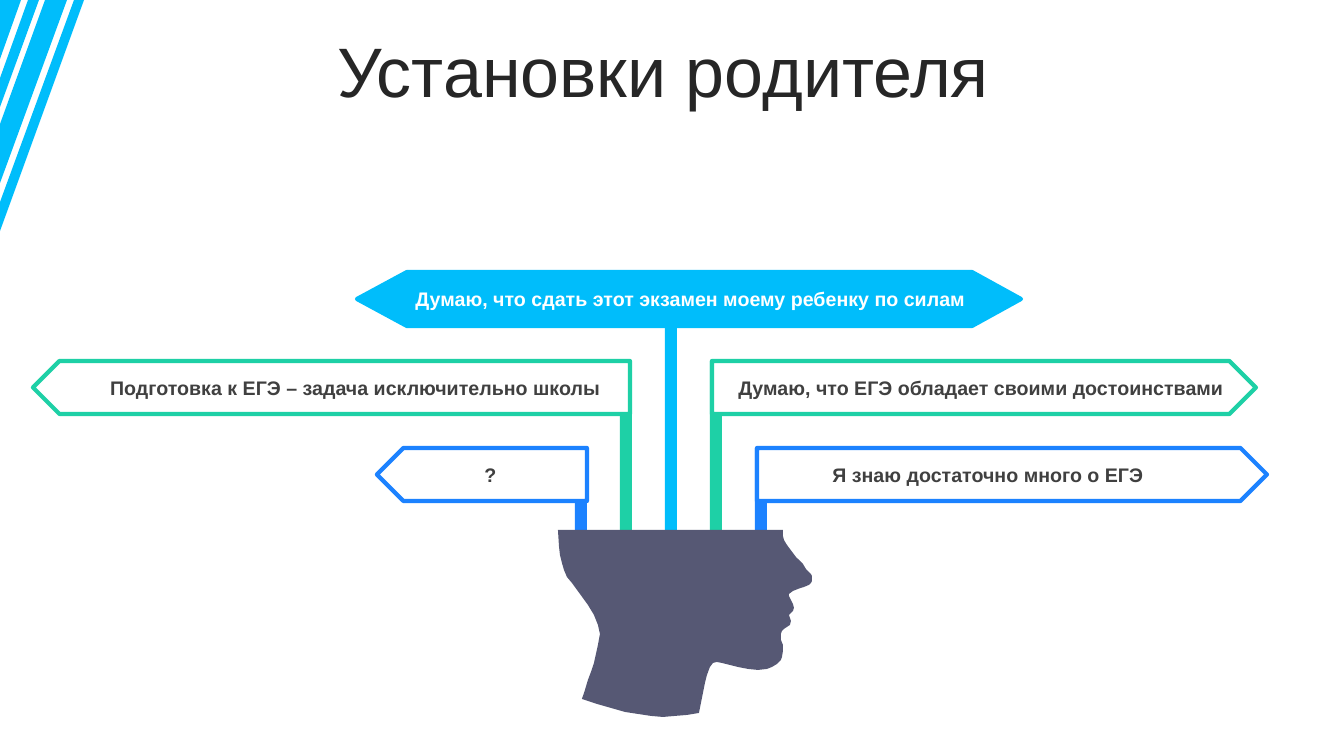
from pptx import Presentation
from pptx.dml.color import RGBColor
from pptx.enum.shapes import MSO_SHAPE as SHAPE
from pptx.enum.text import MSO_ANCHOR as ANCHOR, PP_ALIGN as ALIGN
from pptx.util import Pt

PX = 9144000 / 1008  # EMU per px
FONT = "Arial"
COLORS = {"sky": "00BDFB", "green": "1ED0A6", "blue": "1C82FF", "head": "565874",
          "white": "FFFFFF", "title": "262626", "text": "404040"}

TITLE = "Установки родителя "
TOP_SIGN = ("Думаю, что сдать этот экзамен моему ребенку по силам", 400, 581)
# text, text left, text width, sign left, sign width, row, colour, points left
SIGNS = [
    ("Я знаю достаточно много о ЕГЭ", 767, 442, 757, 510, 2, "blue", False),
    ("Думаю, что ЕГЭ обладает своими достоинствами", 725, 512, 712, 544, 1, "green", False),
    ("?", 403, 175, 377, 210, 2, "blue", True),
    ("Подготовка к ЕГЭ – задача исключительно школы ", 95, 526, 33, 597, 1, "green", True),
]
ROW_TOPS = [272, 361, 448]
SIGN_H, LABEL_H, LABEL_DROP = 53, 34, 10

STEM_COLORS = ["sky", "green", "blue"]  # from the middle outwards
STEM_X, STEM_GAP, STEM_W, STEM_END = 665, 45, 12, 551

STRIPES = [
    [(74, 0), (84, 0), (0, 231), (0, 202)],
    [(39, 0), (0, 107), (0, 78), (28, 0)],
    [(67, 0), (0, 183), (0, 124), (45, 0)],
    [(0, 0), (21, 0), (0, 59)],
]
TOP_SIGN_OUTLINE = [(407, 272), (972, 272), (1021, 299), (972, 326), (407, 326), (357, 299)]
HEAD = [
    (558, 530), (783, 530), (783, 536), (784, 540), (787, 545), (790, 549), (793, 553),
    (796, 557), (799, 560), (803, 564), (806, 569), (808, 571), (811, 574), (812, 576),
    (812, 581), (811, 583), (809, 585), (804, 587), (798, 589), (793, 591), (789, 594),
    (789, 596), (791, 600), (793, 604), (794, 608), (793, 611), (791, 613), (789, 615),
    (790, 618), (791, 621), (790, 625), (787, 627), (784, 629), (782, 631), (781, 634),
    (781, 640), (783, 645), (783, 651), (782, 657), (781, 660), (777, 664), (772, 667),
    (767, 669), (758, 670), (748, 669), (738, 667), (730, 665), (722, 663), (717, 662),
    (713, 663), (710, 667), (707, 675), (705, 683), (703, 693), (701, 703), (699, 713),
    (687, 715), (675, 716), (663, 717), (651, 716), (638, 714), (625, 712), (611, 708),
    (597, 704), (582, 699), (585, 690), (588, 680), (591, 672), (594, 663), (596, 654),
    (598, 645), (600, 634), (598, 625), (594, 615), (588, 605), (580, 594), (572, 583),
    (567, 577), (564, 570), (562, 563), (560, 555), (559, 546),
]


def px(*lengths):
    return [round(n * PX) for n in lengths]


def rgb(name):
    return RGBColor.from_string(COLORS[name])


def paint(sp, fill, line=None):
    sp.shadow.inherit = False
    sp.fill.solid()
    sp.fill.fore_color.rgb = rgb(fill)
    if line:
        sp.line.color.rgb = rgb(line)
        sp.line.width = Pt(3)
    else:
        sp.line.fill.background()


def add_shape(kind, box, fill, line=None):
    sp = slide.shapes.add_shape(kind, *px(*box))
    paint(sp, fill, line)
    return sp


def add_outline(contours, fill, line=None):
    """Draw closed polygons as one freeform."""
    builder = slide.shapes.build_freeform(*contours[0][0], scale=PX)
    for i, points in enumerate(contours):
        if i:
            builder.move_to(*points[0])
        builder.add_line_segments(points[1:], close=True)
    paint(builder.convert_to_shape(), fill, line)


def write(tf, text, size, color, bold=False):
    tf.word_wrap = True
    p = tf.paragraphs[0]
    p.alignment = ALIGN.CENTER
    r = p.add_run()
    r.text = text
    r.font.name, r.font.size, r.font.bold = FONT, Pt(size), bold
    r.font.color.rgb = rgb(color)
    return p


def add_label(text, left, width, row, color):
    box = px(left, ROW_TOPS[row] + LABEL_DROP, width, LABEL_H)
    write(slide.shapes.add_textbox(*box).text_frame, text, 14, color, bold=True)


prs = Presentation()
prs.slide_width, prs.slide_height = px(1344, 756)
slide = prs.slides.add_slide(prs.slide_layouts[5])

title = slide.shapes.title
title.left, title.top, title.width, title.height = px(35, 37, 1276, 80)
title.text_frame.vertical_anchor = ANCHOR.MIDDLE
write(title.text_frame, TITLE, 50, "title").line_spacing = 0.8

add_outline(STRIPES, "sky")

for k in range(-2, 3):
    row = abs(k)
    top = ROW_TOPS[row] + SIGN_H if row == 0 else ROW_TOPS[row]
    add_shape(SHAPE.RECTANGLE, (STEM_X + k * STEM_GAP, top, STEM_W, STEM_END - top),
              STEM_COLORS[row])
add_outline([HEAD], "head")

for text, text_left, text_w, left, width, row, color, points_left in SIGNS:
    sign = add_shape(SHAPE.PENTAGON, (left, ROW_TOPS[row], width, SIGN_H), "white", color)
    if points_left:
        sign.element.spPr.xfrm.set("flipH", "1")
    add_label(text, text_left, text_w, row, "text")

add_outline([TOP_SIGN_OUTLINE], "sky", "sky")
add_label(*TOP_SIGN, 0, "white")

prs.save("out.pptx")
